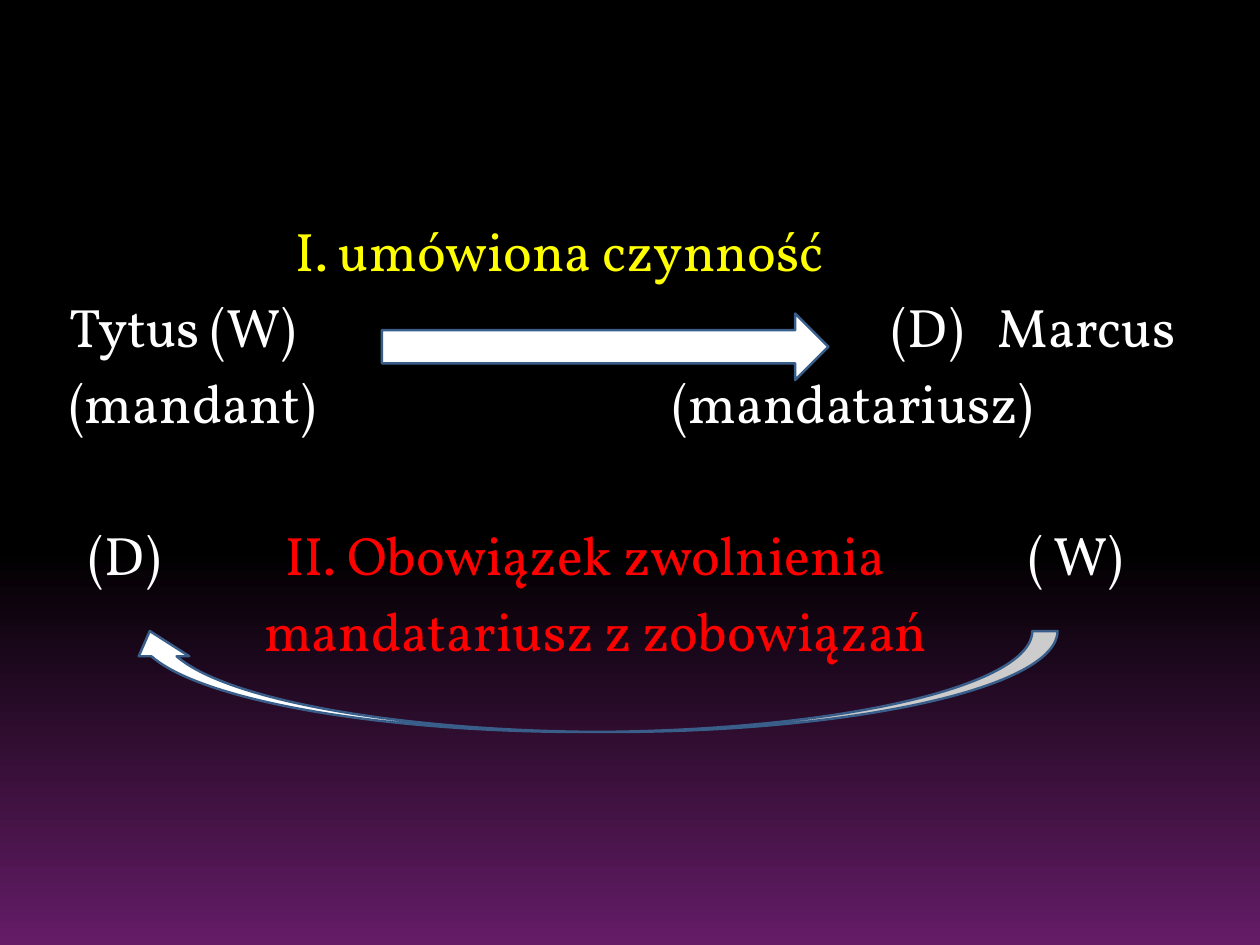
from copy import deepcopy

from pptx import Presentation
from pptx.dml.color import RGBColor as RGB
from pptx.enum.shapes import MSO_SHAPE as Shape
from pptx.enum.text import MSO_ANCHOR as Anchor, MSO_AUTO_SIZE as Fit
from pptx.oxml.ns import qn
from pptx.util import Inches, Pt

HUES = {"white": "FFFFFF", "yellow": "FFFF00", "red": "FF0000",
        "edge": "3A5E8A", "black": "000000", "plum": "641C66"}
FONT = "Vollkorn"
PITCH = 61.8  # distance between text lines, in points

# Each row: line number, then (offset from the left, text, colour)
ROWS = [
    (0, [(2.56, "I. umówiona czynność", "yellow")]),
    (1, [(0, "Tytus (W)", "white"), (9.28, "(D)", "white"),
         (10.48, "Marcus", "white")]),
    (2, [(0, "(mandant)", "white"), (6.81, "(mandatariusz)", "white")]),
    (4, [(0.22, "(D)", "white"), (2.44, "II. Obowiązek zwolnienia", "red"),
         (10.83, "( W)", "white")]),
    (5, [(2.2, "mandatariusz z zobowiązań", "red")]),
]


def hue(name):
    return RGB.from_string(HUES[name])


def write(slide, text, left, top, width, color="white", size=44):
    box = slide.shapes.add_textbox(Inches(left), Inches(top),
                                   Inches(width), Pt(PITCH))
    frame = box.text_frame
    frame.word_wrap, frame.auto_size = True, Fit.NONE
    frame.vertical_anchor = Anchor.TOP
    frame.margin_left = frame.margin_right = 0
    frame.margin_top = frame.margin_bottom = 0
    para = frame.paragraphs[0]
    para.line_spacing = Pt(PITCH)
    run = para.add_run()
    run.text = text
    run.font.name, run.font.size = FONT, Pt(size)
    run.font.color.rgb = hue(color)


def paint(slide):
    """Plum glow rising from the bottom edge into black."""
    fill = slide.background.fill
    fill.gradient()
    fill.gradient_angle = 90
    last = list(slide.element.iter(qn("a:gs")))[-1]
    last.addnext(deepcopy(last))
    glow = [(0, "plum"), (0.42, "black"), (1, "black")]
    for stop, (place, name) in zip(fill.gradient_stops, glow):
        stop.position = place
        stop.color.rgb = hue(name)


def add_rows(slide, left, top, width):
    """Parties and duties; each label runs up to the next one."""
    for line, cells in ROWS:
        ends = [start for start, _, _ in cells[1:]] + [width]
        for (start, text, color), end in zip(cells, ends):
            write(slide, text, left + start, top + line * PITCH / 72,
                  end - start, color=color)


def add_arrow(slide, kind, left, top, width, height, turn=0):
    arrow = slide.shapes.add_shape(kind, Inches(left), Inches(top),
                                   Inches(width), Inches(height))
    arrow.rotation = turn
    arrow.shadow.inherit = False
    arrow.fill.solid()
    arrow.fill.fore_color.rgb = hue("white")
    arrow.line.color.rgb = hue("edge")
    arrow.line.width = Pt(2)


def main():
    deck = Presentation()
    deck.slide_width, deck.slide_height = Inches(14.22), Inches(10.67)
    slide = deck.slides.add_slide(deck.slide_layouts[6])
    paint(slide)
    add_rows(slide, 0.78, 2.33, 12.73)
    # Agreed act to the right, duty of release back to the left
    add_arrow(slide, Shape.RIGHT_ARROW, 4.31, 3.54, 5.04, 0.75)
    add_arrow(slide, Shape.CURVED_LEFT_ARROW, 6.1, 2.43, 1.14, 10.53, turn=90)
    deck.save("out.pptx")


if __name__ == "__main__":
    main()
